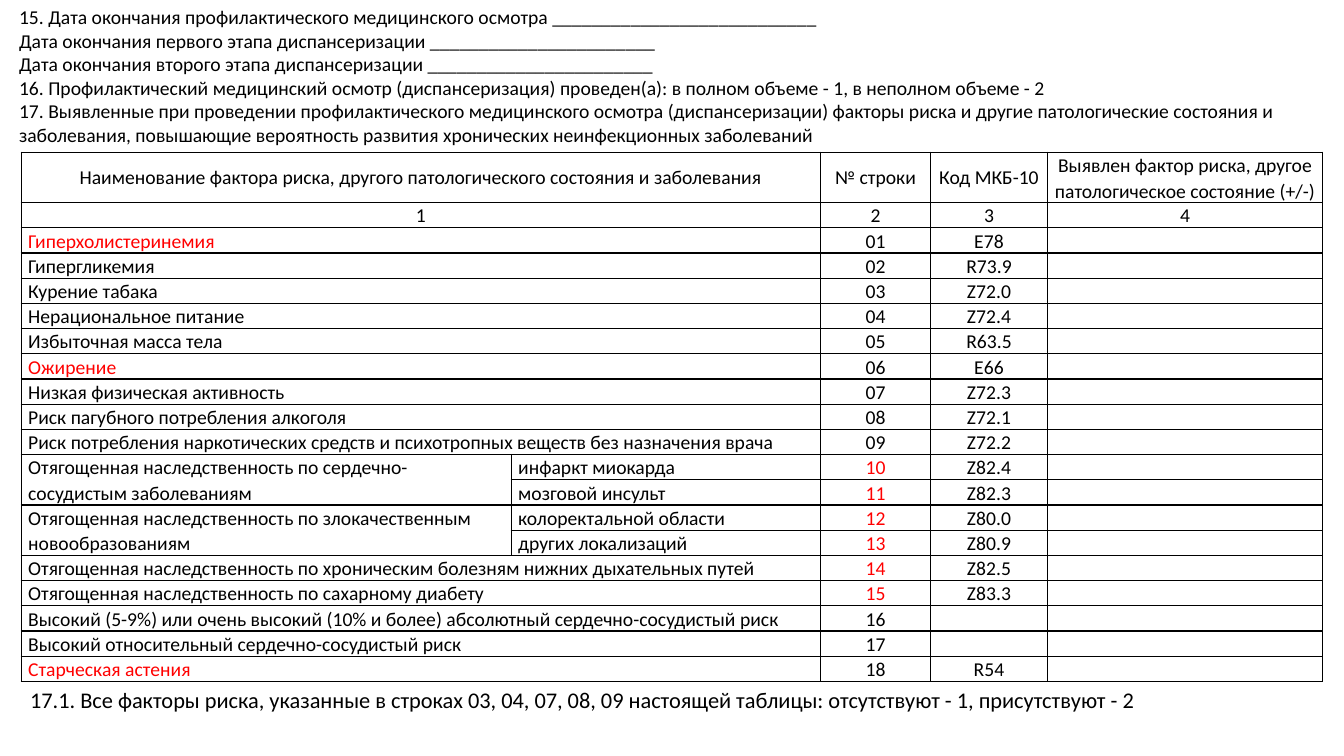
from lxml import etree
from pptx import Presentation
from pptx import util as u
from pptx.dml.color import RGBColor
from pptx.enum import text as t
from pptx.oxml import ns

PX = 9144  # 100 px to the inch
COLORS = {"ink": "000000", "alert": "FF0000"}
FONT = "Calibri"

INTRO = [
    "15. Дата окончания профилактического медицинского осмотра " + "_" * 27,
    "Дата окончания первого этапа диспансеризации " + "_" * 23,
    "Дата окончания второго этапа диспансеризации " + "_" * 23,
    "16. Профилактический медицинский осмотр (диспансеризация) проведен(а): "
    "в полном объеме - 1, в неполном объеме - 2",
    "17. Выявленные при проведении профилактического медицинского осмотра (диспансеризации) "
    "факторы риска и другие патологические состояния и заболевания, повышающие вероятность "
    "развития хронических неинфекционных заболеваний",
]
CLOSING = ("17.1. Все факторы риска, указанные в строках 03, 04, 07, 08, 09 настоящей таблицы: "
           "отсутствуют - 1, присутствуют - 2")

HEADER = [
    ("Наименование фактора риска, другого патологического состояния и заболевания", "",
     "№ строки", "Код МКБ-10", "Выявлен фактор риска, другое патологическое состояние (+/-)"),
    ("1", "", "2", "3", "4"),
]
# Factor, subtype, ICD-10 code; an empty factor continues the one above
FACTORS = [
    ("Гиперхолистеринемия", "", "E78"),
    ("Гипергликемия", "", "R73.9"),
    ("Курение табака", "", "Z72.0"),
    ("Нерациональное питание", "", "Z72.4"),
    ("Избыточная масса тела", "", "R63.5"),
    ("Ожирение", "", "E66"),
    ("Низкая физическая активность", "", "Z72.3"),
    ("Риск пагубного потребления алкоголя", "", "Z72.1"),
    ("Риск потребления наркотических средств и психотропных веществ без назначения врача",
     "", "Z72.2"),
    ("Отягощенная наследственность по сердечно-сосудистым заболеваниям",
     "инфаркт миокарда", "Z82.4"),
    ("", "мозговой инсульт", "Z82.3"),
    ("Отягощенная наследственность по злокачественным новообразованиям",
     "колоректальной области", "Z80.0"),
    ("", "других локализаций", "Z80.9"),
    ("Отягощенная наследственность по хроническим болезням нижних дыхательных путей",
     "", "Z82.5"),
    ("Отягощенная наследственность по сахарному диабету", "", "Z83.3"),
    ("Высокий (5-9%) или очень высокий (10% и более) абсолютный сердечно-сосудистый риск",
     "", ""),
    ("Высокий относительный сердечно-сосудистый риск", "", ""),
    ("Старческая астения", "", "R54"),
]
ALERTS = {"Гиперхолистеринемия", "Ожирение", "Старческая астения",
          *(str(number) for number in range(10, 16))}
COLUMN_WIDTHS = [486, 307, 109, 116, 273]
HEADER_HEIGHT, ROW_HEIGHT = 50, 25


def write(frame, lines, size=14, color="ink", align=t.PP_ALIGN.LEFT, spacing=None):
    for index, line in enumerate(lines):
        paragraph = frame.add_paragraph() if index else frame.paragraphs[0]
        paragraph.alignment = align
        paragraph.line_spacing = spacing
        if not line:  # an empty cell still needs a size, or its row grows
            etree.SubElement(paragraph._p, ns.qn("a:endParaRPr"), sz=str(size * 100))
            continue
        run = paragraph.add_run()
        run.text = line
        run.font.name = FONT
        run.font.size = u.Pt(size)
        run.font.color.rgb = RGBColor.from_string(COLORS[color])


def outline(cell):
    """Draw a thin line on all four sides of the cell."""
    properties = cell._tc.get_or_add_tcPr()
    for side in ("lnL", "lnR", "lnT", "lnB"):
        line = etree.SubElement(properties, ns.qn("a:" + side), w=str(u.Pt(1)))
        fill = etree.SubElement(line, ns.qn("a:solidFill"))
        etree.SubElement(fill, ns.qn("a:srgbClr"), val=COLORS["ink"])


class FormSlide:
    def __init__(self, presentation):
        self.slide = presentation.slides.add_slide(presentation.slide_layouts[6])

    def text(self, left, top, width, height, lines, **style):
        box = self.slide.shapes.add_textbox(left * PX, top * PX, width * PX, height * PX)
        box.text_frame.word_wrap = True
        box.text_frame.auto_size = t.MSO_AUTO_SIZE.SHAPE_TO_FIT_TEXT
        write(box.text_frame, lines, **style)

    def table(self, left, top, widths, heights, rows):
        table = self.slide.shapes.add_table(
            len(rows), len(widths), left * PX, top * PX,
            sum(widths) * PX, sum(heights) * PX).table
        table.first_row = table.horz_banding = False
        for column, width in zip(table.columns, widths):
            column.width = width * PX
        for row, height in zip(table.rows, heights):
            row.height = height * PX
        for row_index, values in enumerate(rows):
            for column_index, value in enumerate(values):
                is_name = row_index >= len(HEADER) and column_index < 2
                self.cell(table.cell(row_index, column_index), value, is_name)
        return table

    def cell(self, cell, value, is_name):
        cell.margin_left = cell.margin_right = 7 * PX
        cell.margin_top = cell.margin_bottom = 0
        cell.vertical_anchor = t.MSO_ANCHOR.TOP if is_name else t.MSO_ANCHOR.MIDDLE
        outline(cell)
        cell.fill.background()
        write(cell.text_frame, [value], spacing=1.07,
              color="alert" if value in ALERTS else "ink",
              align=t.PP_ALIGN.LEFT if is_name else t.PP_ALIGN.CENTER)


def merge_names(table, rows):
    """Join a factor with its empty subtype, or with the row that continues it."""
    for index, (factor, subtype, *_) in enumerate(rows):
        if not subtype:
            table.cell(index, 0).merge(table.cell(index, 1))
        elif not factor:
            table.cell(index - 1, 0).merge(table.cell(index, 0))


def main():
    presentation = Presentation()
    presentation.slide_width, presentation.slide_height = 1333 * PX, 750 * PX
    form = FormSlide(presentation)
    form.text(9, 0, 1325, 151, INTRO)
    rows = HEADER + [(factor, subtype, f"{number:02}", code, "")
                     for number, (factor, subtype, code) in enumerate(FACTORS, 1)]
    heights = [HEADER_HEIGHT] + [ROW_HEIGHT] * (len(rows) - 1)
    table = form.table(21, 151, COLUMN_WIDTHS, heights, rows)
    merge_names(table, rows)
    form.text(20, 676, 1291, 64, [CLOSING], size=16)
    presentation.save("out.pptx")


if __name__ == "__main__":
    main()
